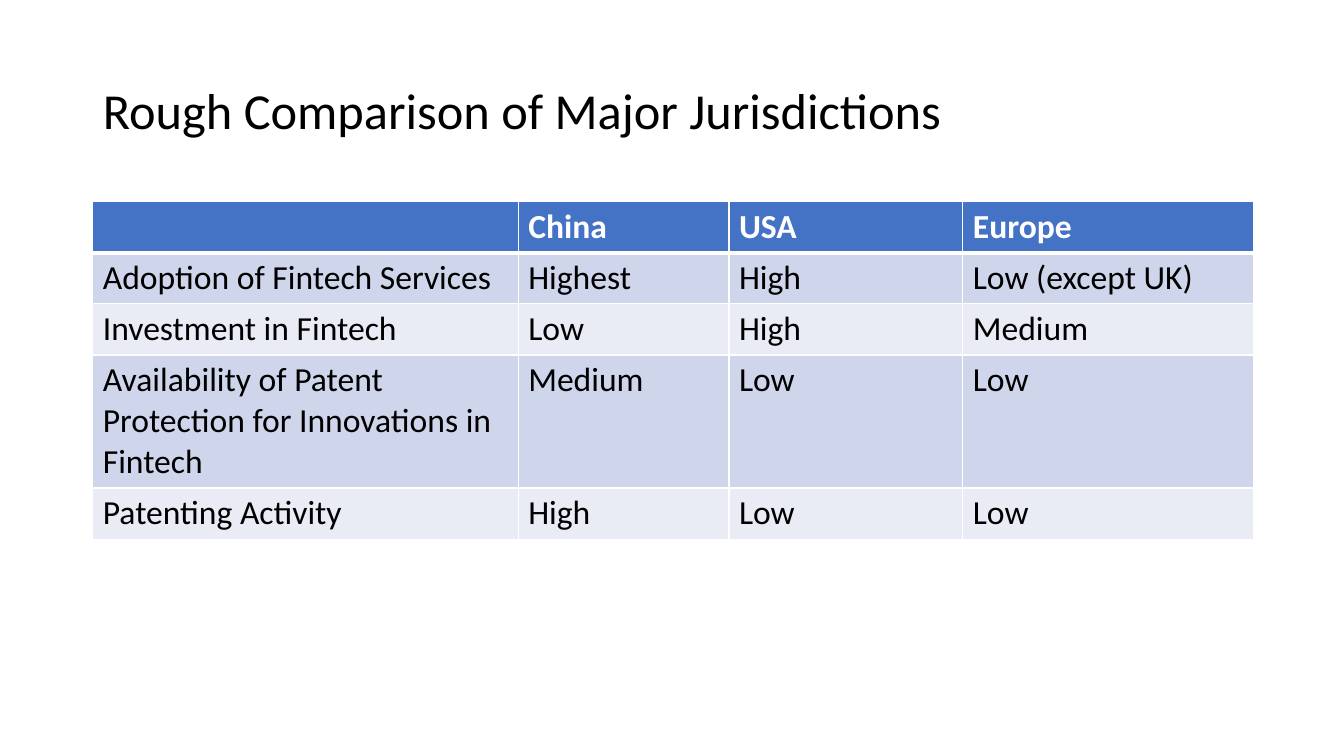
from lxml import etree
from pptx import Presentation
from pptx.dml.color import RGBColor
from pptx.enum.text import MSO_ANCHOR, PP_ALIGN
from pptx.oxml.ns import qn
from pptx.util import Inches, Pt

MIDDLE = MSO_ANCHOR.MIDDLE
LEFT = PP_ALIGN.LEFT
TITLE_ONLY = 5

FONT = "Calibri"
COLORS = {
    "text": "000000",
    "header_text": "FFFFFF",
    "header": "4472C4",
    "odd_row": "CFD5EA",
    "even_row": "E9EBF5",
    "border": "FFFFFF",
}

SLIDE_WIDTH, SLIDE_HEIGHT = Inches(13.33), Inches(7.5)
MARGIN = Inches(0.92)
CONTENT_WIDTH = Inches(11.5)
COLUMN_WIDTHS = (4.22, 2.09, 2.32, 2.88)
LINE_HEIGHT, CELL_PADDING = 0.4, 0.1

# Each row: line count, then the cell texts
ROWS = (
    (1, ("", "China", "USA", "Europe")),
    (1, ("Adoption of Fintech Services", "Highest", "High", "Low (except UK)")),
    (1, ("Investment in Fintech", "Low", "High", "Medium")),
    (3, ("Availability of Patent Protection for Innovations in Fintech",
         "Medium", "Low", "Low")),
    (1, ("Patenting Activity", "High", "Low", "Low")),
)


def write_text(frame, text, size, color="text", bold=False, line_spacing=None):
    paragraph = frame.paragraphs[0]
    paragraph.text = text
    paragraph.alignment = LEFT
    if line_spacing:
        paragraph.line_spacing = line_spacing
    font = paragraph.font
    for target in [font] + [run.font for run in paragraph.runs]:
        target.name = FONT
        target.size = Pt(size)
        target.bold = bold
        target.color.rgb = RGBColor.from_string(COLORS[color])


def set_borders(cell, bottom_width):
    properties = cell._tc.get_or_add_tcPr()
    widths = {"a:lnL": 1, "a:lnR": 1, "a:lnT": 1, "a:lnB": bottom_width}
    # Border lines come before the fill in the cell properties
    for position, (tag, width) in enumerate(widths.items()):
        line = etree.Element(qn(tag), w=str(Pt(width)))
        fill = etree.SubElement(line, qn("a:solidFill"))
        etree.SubElement(fill, qn("a:srgbClr"), val=COLORS["border"])
        properties.insert(position, line)


def add_title(slide, text):
    title = slide.shapes.title
    title.left, title.top = MARGIN, Inches(0.4)
    title.width, title.height = CONTENT_WIDTH, Inches(1.45)
    title.text_frame.vertical_anchor = MIDDLE
    title.text_frame.word_wrap = True
    write_text(title.text_frame, text, size=36, line_spacing=0.9)


def add_comparison_table(slide):
    heights = [Inches(lines * LINE_HEIGHT + CELL_PADDING) for lines, _ in ROWS]
    table = slide.shapes.add_table(
        len(ROWS), len(COLUMN_WIDTHS), MARGIN, Inches(2),
        CONTENT_WIDTH, sum(heights)).table
    for column, width in zip(table.columns, COLUMN_WIDTHS):
        column.width = Inches(width)

    for row_index, (_, texts) in enumerate(ROWS):
        table.rows[row_index].height = heights[row_index]
        is_header = row_index == 0
        if is_header:
            fill_color = "header"
        else:
            fill_color = "odd_row" if row_index % 2 else "even_row"
        for column_index, text in enumerate(texts):
            cell = table.cell(row_index, column_index)
            cell.fill.solid()
            cell.fill.fore_color.rgb = RGBColor.from_string(COLORS[fill_color])
            set_borders(cell, bottom_width=3 if is_header else 1)
            write_text(cell.text_frame, text, size=24, bold=is_header,
                       color="header_text" if is_header else "text")


def main():
    presentation = Presentation()
    presentation.slide_width = SLIDE_WIDTH
    presentation.slide_height = SLIDE_HEIGHT
    slide = presentation.slides.add_slide(presentation.slide_layouts[TITLE_ONLY])
    add_title(slide, "Rough Comparison of Major Jurisdictions")
    add_comparison_table(slide)
    presentation.save("out.pptx")


if __name__ == "__main__":
    main()
